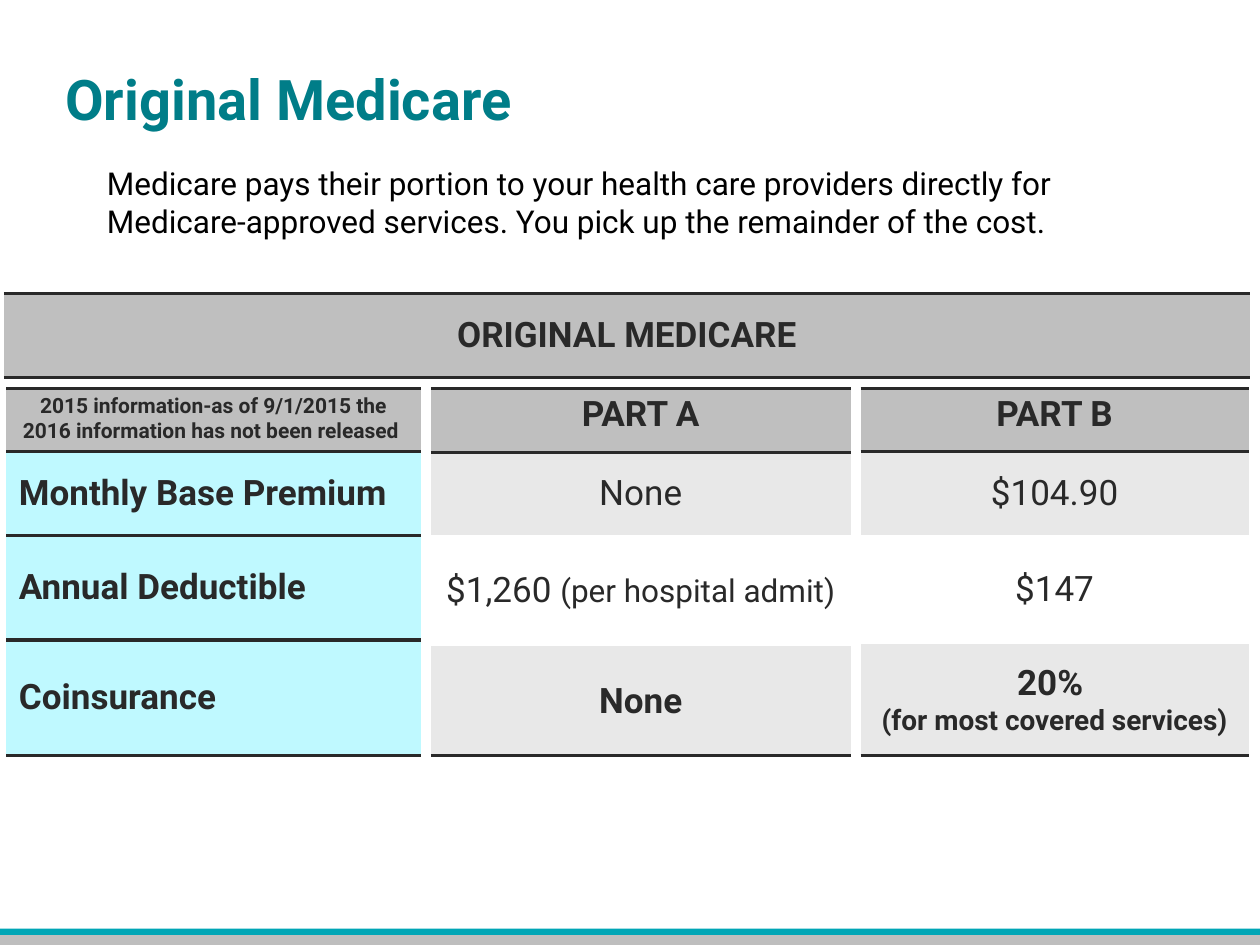
from lxml import etree
from pptx import Presentation
from pptx import util as u
from pptx.dml.color import RGBColor
from pptx.enum import shapes, text
from pptx.oxml.ns import qn

COLORS = {
    "title": "007D88", "body": "000000", "ink": "292929",
    "header": "BFBFBF", "label": "BFF9FF", "shaded": "E8E8E8", "plain": "FFFFFF",
    "teal_bar": "00A6B6", "gray_bar": "BEBEBE",
}
FONT = "Roboto"
TOP, MIDDLE = text.MSO_ANCHOR.TOP, text.MSO_ANCHOR.MIDDLE
LEFT, CENTER = text.PP_ALIGN.LEFT, text.PP_ALIGN.CENTER


def color(name):
    return RGBColor.from_string(COLORS[name])


def style_run(run, size, bold, ink):
    run.font.name = FONT
    run.font.size = u.Pt(size)
    run.font.bold = bold
    run.font.color.rgb = color(ink)


def add_words(slide, box, words, size, bold, ink, anchor):
    frame = slide.shapes.add_textbox(*map(u.Inches, box)).text_frame
    frame.word_wrap = True
    frame.vertical_anchor = anchor
    frame.text = words
    style_run(frame.paragraphs[0].runs[0], size, bold, ink)


def add_footer(slide, left, top, width):
    for name, offset, height in (("gray_bar", 0.05, 0.08), ("teal_bar", 0, 0.05)):
        bar = slide.shapes.add_shape(
            shapes.MSO_SHAPE.RECTANGLE, u.Inches(left), u.Inches(top + offset),
            u.Inches(width), u.Inches(height))
        bar.shadow.inherit = False
        bar.fill.solid()
        bar.fill.fore_color.rgb = color(name)
        bar.line.fill.background()


def set_borders(cell, top, bottom):
    properties = cell._tc.get_or_add_tcPr()
    sides = (("a:lnL", 0), ("a:lnR", 0), ("a:lnT", top), ("a:lnB", bottom))
    for index, (tag, points) in enumerate(sides):
        line = etree.Element(qn(tag), w=str(int(u.Pt(points))))
        if points:
            fill = etree.SubElement(line, qn("a:solidFill"))
            etree.SubElement(fill, qn("a:srgbClr"), val=COLORS["ink"])
        else:
            etree.SubElement(line, qn("a:noFill"))
        properties.insert(index, line)


def fill_cell(cell, lines, fill, top, bottom, align=CENTER, anchor=MIDDLE):
    cell.fill.solid()
    cell.fill.fore_color.rgb = color(fill)
    cell.vertical_anchor = anchor
    frame = cell.text_frame
    for index, runs in enumerate(lines):
        paragraph = frame.paragraphs[0] if index == 0 else frame.add_paragraph()
        paragraph.alignment = align
        for words, size, bold in runs:
            run = paragraph.add_run()
            run.text = words
            style_run(run, size, bold, "ink")
    set_borders(cell, top, bottom)


def add_column(slide, left, top, width, heights):
    table = slide.shapes.add_table(
        len(heights), 1, u.Inches(left), u.Inches(top),
        u.Inches(width), u.Inches(sum(heights))).table
    table.columns[0].width = u.Inches(width)
    for row, height in zip(table.rows, heights):
        row.height = u.Inches(height)
    return [table.cell(index, 0) for index in range(len(heights))]


def add_banner(slide, left, top, width, height):
    banner, = add_column(slide, left, top, width, [height])
    fill_cell(banner, [[("ORIGINAL MEDICARE", 20, True)]], "header", 2, 2)


def add_labels(slide, left, top, width, heights, note, labels):
    header, *cells = add_column(slide, left, top, width, heights)
    fill_cell(header, [[(note, 12, True)]], "header", 2, 2, anchor=TOP)
    borders = ((2, 2.25), (2.25, 2.25), (2.25, 2))
    for cell, label, edges in zip(cells, labels, borders):
        fill_cell(cell, [[(label, 20, True)]], "label", *edges, align=LEFT)


def add_part(slide, left, top, width, heights, heading, values):
    header, *cells = add_column(slide, left, top, width, heights)
    fill_cell(header, [[(heading, 20, True)]], "header", 2, 2, anchor=TOP)
    looks = (("shaded", 2, 0), ("plain", 0, 0), ("shaded", 0, 2))
    for cell, lines, look in zip(cells, values, looks):
        fill_cell(cell, lines, *look)


def add_costs(slide, left, top):
    add_banner(slide, left, top, 9.89, 0.67)
    columns_top = top + 0.75
    add_labels(
        slide, left + 0.02, columns_top, 3.29, [0.5, 0.67, 0.83, 0.92],
        "2015 information-as of 9/1/2015 the 2016 information has not been released ",
        ["Monthly Base Premium", "Annual Deductible", "Coinsurance"])
    add_part(
        slide, left + 3.39, columns_top, 3.33, [0.51, 0.66, 0.88, 0.87], "PART A",
        [[[("None", 20, False)]],
         [[("$1,260 ", 20, False), ("(per hospital admit)", 18, False)]],
         [[("None", 20, True)]]])
    add_part(
        slide, left + 6.8, columns_top, 3.08, [0.5, 0.67, 0.86, 0.89], "PART B",
        [[[("$104.90", 20, False)]],
         [[("$147", 20, False)]],
         [[("20% ", 20, True)], [("(for most covered services)", 16, True)]]])


def main():
    deck = Presentation()
    deck.slide_width, deck.slide_height = u.Inches(10), u.Inches(7.5)
    slide = deck.slides.add_slide(deck.slide_layouts[6])
    add_footer(slide, 0, 7.37, 10)
    add_words(slide, (0.42, 0.3, 9.08, 0.95), "Original Medicare",
              32, True, "title", MIDDLE)
    add_words(slide, (0.75, 1.25, 8.42, 0.71),
              "Medicare pays their portion to your health care providers directly for "
              "Medicare-approved services. You pick up the remainder of the cost.",
              18, False, "body", TOP)
    add_costs(slide, 0.03, 2.33)
    deck.save("out.pptx")


if __name__ == "__main__":
    main()
